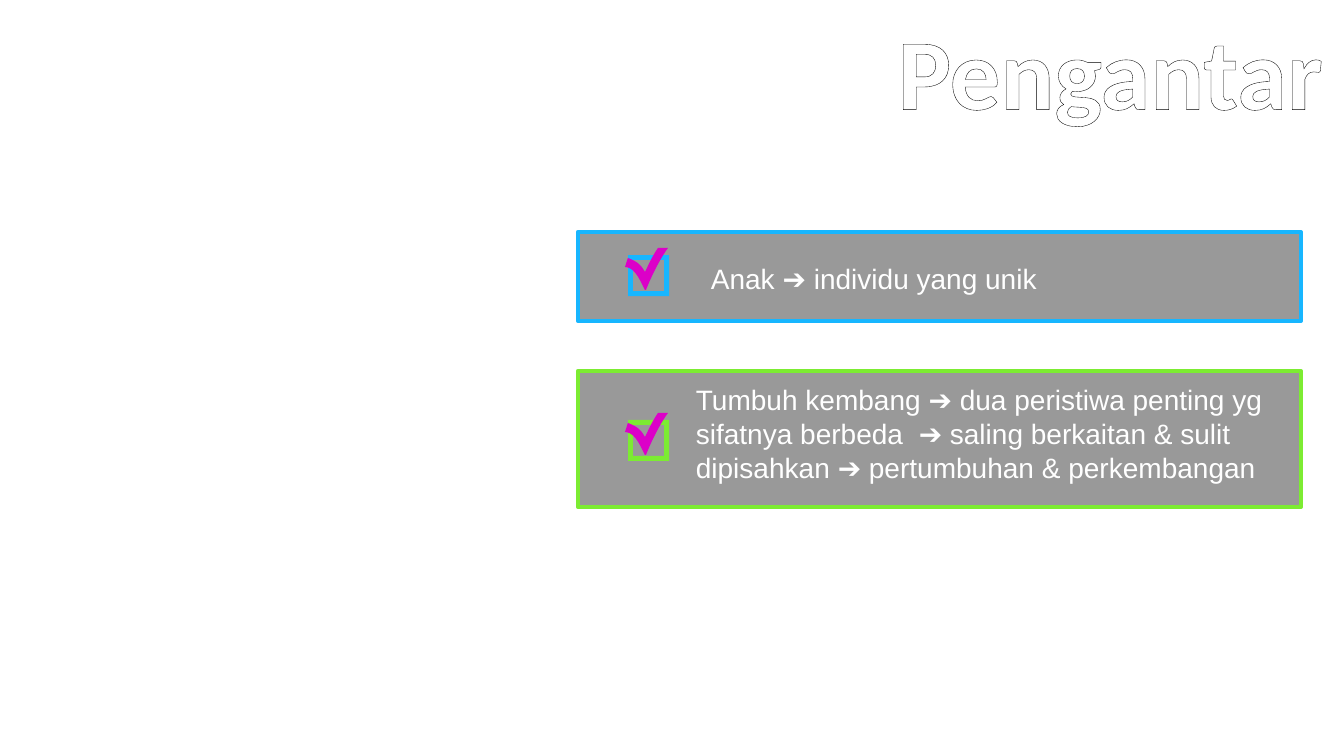
import lxml.etree
import pptx
import pptx.dml.color
import pptx.enum.shapes
import pptx.enum.text
import pptx.oxml.ns
import pptx.util

# Content: boxes are (left, top, width, height) in px
TITLE = ("Pengantar", (698, 51, 637, 89))
CARDS = [
    {"text": "Anak ➔ individu yang unik", "accent": "blue",
     "top": 232, "height": 89, "checkbox_top": 255, "text_box": (701, 257, 549, 44)},
    {"text": "Tumbuh kembang ➔ dua peristiwa penting yg sifatnya berbeda  ➔ "
             "saling berkaitan & sulit dipisahkan ➔ pertumbuhan & perkembangan",
     "accent": "green",
     "top": 371, "height": 136, "checkbox_top": 420, "text_box": (686, 378, 599, 112)},
]
CARD_LEFT, CARD_WIDTH = 578, 723
CHECKBOX_LEFT, CHECKBOX_SIZE, CHECKBOX_BORDER = 628, 41, 5
TICK_LEFT, TICK_RISE = 625, 7

# Tick outline: two points make a line, four make a Bézier curve
TICK = [
    [(33, 0), (43, 0)],
    [(43, 0), (35, 11), (27, 27), (21, 42)],
    [(21, 42), (20, 42)],
    [(20, 42), (15, 33), (11, 20), (0, 19)],
    [(0, 19), (3, 10)],
    [(3, 10), (13, 14), (16, 17), (20, 24)],
    [(20, 24), (25, 14), (27, 9), (33, 0)],
]
CURVE_STEPS = 10

THEME = {
    "blue": "17B6FF", "green": "7CEC32", "tick": "DC00C8",
    "card": "000000", "card_alpha": 40, "text": "FFFFFF", "outline": "000000",
    "body_font": "Arial", "body_size": 20,
    "title_font": "Calibri", "title_size": 72, "title_spacing": 49,
    "card_line": 3, "title_line": 0.75,
}
EMU_PER_PX = 914400 / 100.8


def emu(px):
    return pptx.util.Emu(round(px * EMU_PER_PX))


def color(name):
    return pptx.dml.color.RGBColor.from_string(THEME[name])


def paint(shape, fill):
    shape.shadow.inherit = False
    shape.fill.solid()
    shape.fill.fore_color.rgb = color(fill)
    shape.line.fill.background()


def add_text(slide, text, box, role):
    shape = slide.shapes.add_textbox(*map(emu, box))
    shape.text_frame.word_wrap = True
    paragraph = shape.text_frame.paragraphs[0]
    run = paragraph.add_run()
    run.text = text
    run.font.name = THEME[role + "_font"]
    run.font.size = pptx.util.Pt(THEME[role + "_size"])
    run.font.color.rgb = color("text")
    return shape.text_frame, paragraph, run


def add_card(slide, card):
    card_box = (CARD_LEFT, card["top"], CARD_WIDTH, card["height"])
    shape = slide.shapes.add_shape(
        pptx.enum.shapes.MSO_SHAPE.RECTANGLE, *map(emu, card_box))
    paint(shape, "card")
    shape.line.color.rgb = color(card["accent"])
    shape.line.width = pptx.util.Pt(THEME["card_line"])
    # Fill transparency
    fill_color = shape.fill._xPr.find(".//" + pptx.oxml.ns.qn("a:srgbClr"))
    alpha = lxml.etree.SubElement(fill_color, pptx.oxml.ns.qn("a:alpha"))
    alpha.set("val", str(THEME["card_alpha"] * 1000))


def tick_points():
    points = [TICK[0][0]]
    for segment in TICK:
        if len(segment) == 2:
            points.append(segment[1])
            continue
        for step in range(1, CURVE_STEPS + 1):
            t = step / CURVE_STEPS
            weights = ((1 - t) ** 3, 3 * t * (1 - t) ** 2, 3 * t * t * (1 - t), t ** 3)
            points.append(tuple(
                sum(weight * point[axis] for weight, point in zip(weights, segment))
                for axis in (0, 1)))
    return points


def add_checkbox(slide, card):
    top = card["checkbox_top"]
    checkbox = slide.shapes.add_shape(
        pptx.enum.shapes.MSO_SHAPE.FRAME, emu(CHECKBOX_LEFT), emu(top),
        emu(CHECKBOX_SIZE), emu(CHECKBOX_SIZE))
    checkbox.adjustments[0] = CHECKBOX_BORDER / CHECKBOX_SIZE
    paint(checkbox, card["accent"])
    # Tick over the checkbox
    points = [(emu(TICK_LEFT + x), emu(top - TICK_RISE + y)) for x, y in tick_points()]
    builder = slide.shapes.build_freeform(*points[0])
    builder.add_line_segments(points[1:], close=True)
    paint(builder.convert_to_shape(), "tick")


def add_title(slide):
    frame, paragraph, run = add_text(slide, *TITLE, "title")
    frame.vertical_anchor = pptx.enum.text.MSO_ANCHOR.MIDDLE
    frame.margin_left = frame.margin_right = emu(12)
    paragraph.alignment = pptx.enum.text.PP_ALIGN.RIGHT
    paragraph.line_spacing = pptx.util.Pt(THEME["title_spacing"])
    run.font.bold = True
    # Letter outline
    line = lxml.etree.Element(pptx.oxml.ns.qn("a:ln"))
    line.set("w", str(pptx.util.Pt(THEME["title_line"])))
    fill = lxml.etree.SubElement(line, pptx.oxml.ns.qn("a:solidFill"))
    lxml.etree.SubElement(fill, pptx.oxml.ns.qn("a:srgbClr")).set("val", THEME["outline"])
    run._r.get_or_add_rPr().insert(0, line)


def main():
    presentation = pptx.Presentation()
    presentation.slide_width, presentation.slide_height = emu(1344), emu(756)
    slide = presentation.slides.add_slide(presentation.slide_layouts[6])
    for card in CARDS:
        add_card(slide, card)
    for card in CARDS:
        add_checkbox(slide, card)
    for card in CARDS:
        add_text(slide, card["text"], card["text_box"], "body")
    add_title(slide)
    presentation.save("out.pptx")


if __name__ == "__main__":
    main()
